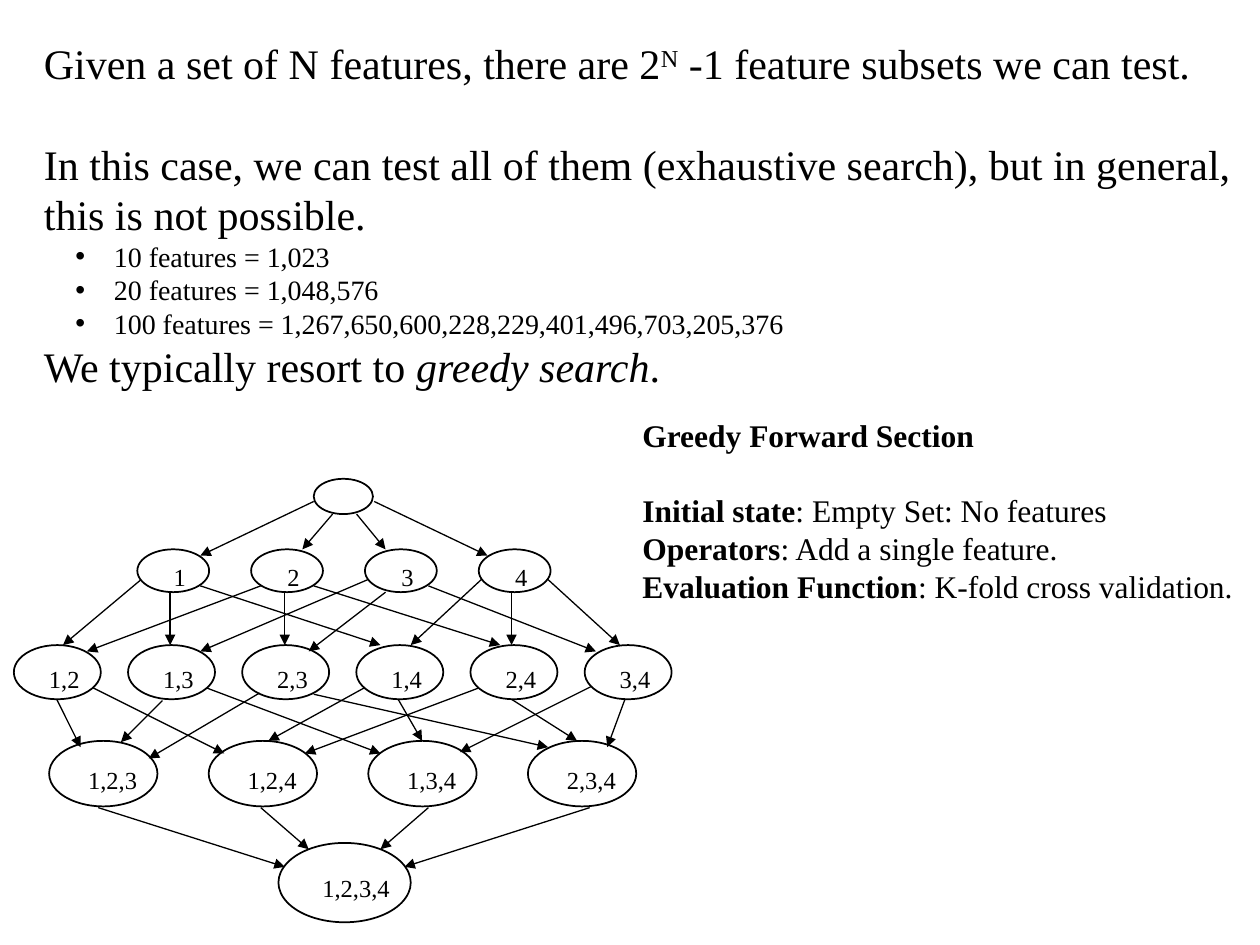
from lxml import etree
from pptx import Presentation, util as u
from pptx.dml.color import RGBColor
from pptx.enum import shapes, text
from pptx.oxml.ns import qn

FONT = "Times New Roman"
BLACK = "000000"

# first left, last left, top, width, height, label offset x and y, labels
NODE_ROWS = [
    (2.49, 2.49, 0, 0.47, 0.28, 0, 0, [""]),
    (1.09, 3.8, 0.56, 0.57, 0.34, 0.19, 0.05, ["1", "2", "3", "4"]),
    (0.11, 4.64, 1.32, 0.69, 0.43, 0.18, 0.1,
     ["1,2", "1,3", "2,3", "1,4", "2,4", "3,4"]),
    (0.39, 4.19, 2.08, 0.86, 0.52, 0.21, 0.14,
     ["1,2,3", "1,2,4", "1,3,4", "2,3,4"]),
    (2.21, 2.21, 2.89, 1.05, 0.63, 0.25, 0.19, ["1,2,3,4"]),
]

# from x, from y, to x, to y within the lattice
ARROWS = [
    # empty set to single features
    (2.49, 0.18, 1.59, 0.61), (2.64, 0.28, 2.4, 0.56),
    (2.83, 0.28, 3.06, 0.56), (2.97, 0.18, 3.87, 0.61),
    # single features to pairs
    (1.12, 0.8, 0.5, 1.32), (1.35, 0.9, 1.35, 1.32), (1.59, 0.85, 3.02, 1.32),
    (2.07, 0.85, 0.69, 1.37), (2.26, 0.9, 2.26, 1.32), (2.49, 0.85, 3.97, 1.32),
    (2.92, 0.8, 1.59, 1.37), (3.06, 0.9, 2.45, 1.37), (3.4, 0.85, 4.73, 1.37),
    (3.82, 0.8, 3.26, 1.32), (4.06, 0.9, 4.06, 1.32), (4.35, 0.8, 4.92, 1.32),
    # pairs to triples
    (0.45, 1.75, 0.64, 2.13), (0.74, 1.66, 1.78, 2.18),
    (1.29, 1.76, 0.96, 2.09), (1.64, 1.66, 3.02, 2.18),
    (2.06, 1.7, 1.18, 2.22), (2.49, 1.71, 4.35, 2.13),
    (2.89, 1.66, 2.13, 2.08), (3.16, 1.75, 3.35, 2.08),
    (3.8, 1.66, 2.42, 2.18), (4.06, 1.75, 4.58, 2.08),
    (4.69, 1.65, 3.65, 2.17), (4.96, 1.75, 4.82, 2.13),
    # triples to the full set
    (0.78, 2.61, 2.26, 3.08), (2.07, 2.61, 2.45, 2.94),
    (3.4, 2.61, 3.02, 2.94), (4.68, 2.61, 3.21, 3.08),
]


def colour(value):
    return RGBColor.from_string(value)


def add_span(para, words, size, **formats):
    span = para.add_run()
    span.text = words
    span.font.color.rgb = colour(BLACK)
    for name, value in {"name": FONT, "size": u.Pt(size), **formats}.items():
        setattr(span.font, name, value)
    return span


def add_text_box(slide, box, wrap=True):
    frame = slide.shapes.add_textbox(*map(u.Inches, box)).text_frame
    frame.word_wrap = wrap
    return frame


def add_paras(frame, count):
    return [frame.paragraphs[0]] + [frame.add_paragraph() for _ in range(count - 1)]


def add_bullet(para):
    para.level = 1
    props = para._p.get_or_add_pPr()
    props.set("marL", str(u.Inches(0.5)))
    props.set("indent", str(u.Inches(-0.25)))
    etree.SubElement(props, qn("a:buFont"), typeface="Arial")
    etree.SubElement(props, qn("a:buChar"), char="•")


def add_explanation(slide, box):
    counts = ["10 features = 1,023", "20 features = 1,048,576",
              "100 features = 1,267,650,600,228,229,401,496,703,205,376"]
    first, second, *bullets, last = add_paras(add_text_box(slide, box), 6)
    add_span(first, "Given a set of N features, there are 2", 24)
    power = add_span(first, "N", 24)
    power.font._element.set("baseline", "30000")
    add_span(first, " -1 feature subsets we can test.", 24)
    second.space_before = u.Pt(28.8)
    add_span(second, "In this case, we can test all of them (exhaustive search), "
                     "but in general, this is not possible.", 24)
    for para, words in zip(bullets, counts):
        add_bullet(para)
        add_span(para, " " + words, 16)
    add_span(last, "We typically resort to ", 24)
    add_span(last, "greedy search", 24, italic=True)
    add_span(last, ".", 24)


def add_search_summary(slide, box):
    lines = [("Greedy Forward Section", ""),
             ("Initial state", ": Empty Set: No features"),
             ("Operators", ": Add a single feature."),
             ("Evaluation Function", ": K-fold cross validation.")]
    paras = add_paras(add_text_box(slide, box), len(lines))
    for para, (term, meaning) in zip(paras, lines):
        add_span(para, term, 18, bold=True)
        if meaning:
            add_span(para, meaning, 18, bold=False)
    paras[1].space_before = u.Pt(21.6)


def add_arrow(slide, start_x, start_y, end_x, end_y):
    arrow = slide.shapes.add_connector(
        shapes.MSO_CONNECTOR.STRAIGHT,
        *map(u.Inches, (start_x, start_y, end_x, end_y)))
    arrow.line.color.rgb = colour(BLACK)
    arrow.line.width = u.Pt(0.75)
    etree.SubElement(arrow.line._get_or_add_ln(), qn("a:tailEnd"), type="triangle")
    etree.SubElement(arrow._element.spPr, qn("a:effectLst"))


def add_node(slide, box):
    node = slide.shapes.add_shape(shapes.MSO_SHAPE.OVAL, *map(u.Inches, box))
    node.shadow.inherit = False
    node.fill.background()
    node.line.color.rgb = colour(BLACK)
    node.line.width = u.Pt(1)


def add_label(slide, left, top, words):
    width = 0.23 + 0.073 * len(words)
    frame = add_text_box(slide, (left, top, width, 0.34), wrap=False)
    frame.auto_size = text.MSO_AUTO_SIZE.SHAPE_TO_FIT_TEXT
    add_span(frame.paragraphs[0], words, 14)


def add_lattice(slide, left, top):
    """Draw the feature subsets, one row per subset size, joined by arrows."""
    for start_x, start_y, end_x, end_y in ARROWS:
        add_arrow(slide, left + start_x, top + start_y, left + end_x, top + end_y)
    for first, last, row_top, width, height, shift_x, shift_y, labels in NODE_ROWS:
        pitch = (last - first) / max(len(labels) - 1, 1)
        for index, words in enumerate(labels):
            x, y = left + first + index * pitch, top + row_top
            add_node(slide, (x, y, width, height))
            if words:
                add_label(slide, x + shift_x, y + shift_y, words)


def main():
    deck = Presentation()
    deck.slide_width, deck.slide_height = u.Inches(10), u.Inches(7.5)
    page = deck.slides.add_slide(deck.slide_layouts[6])
    add_explanation(page, (0.25, 0.25, 9.75, 3.33))
    add_lattice(page, 0, 3.8)
    add_search_summary(page, (5, 3.25, 5, 2.42))
    deck.save("out.pptx")


if __name__ == "__main__":
    main()
